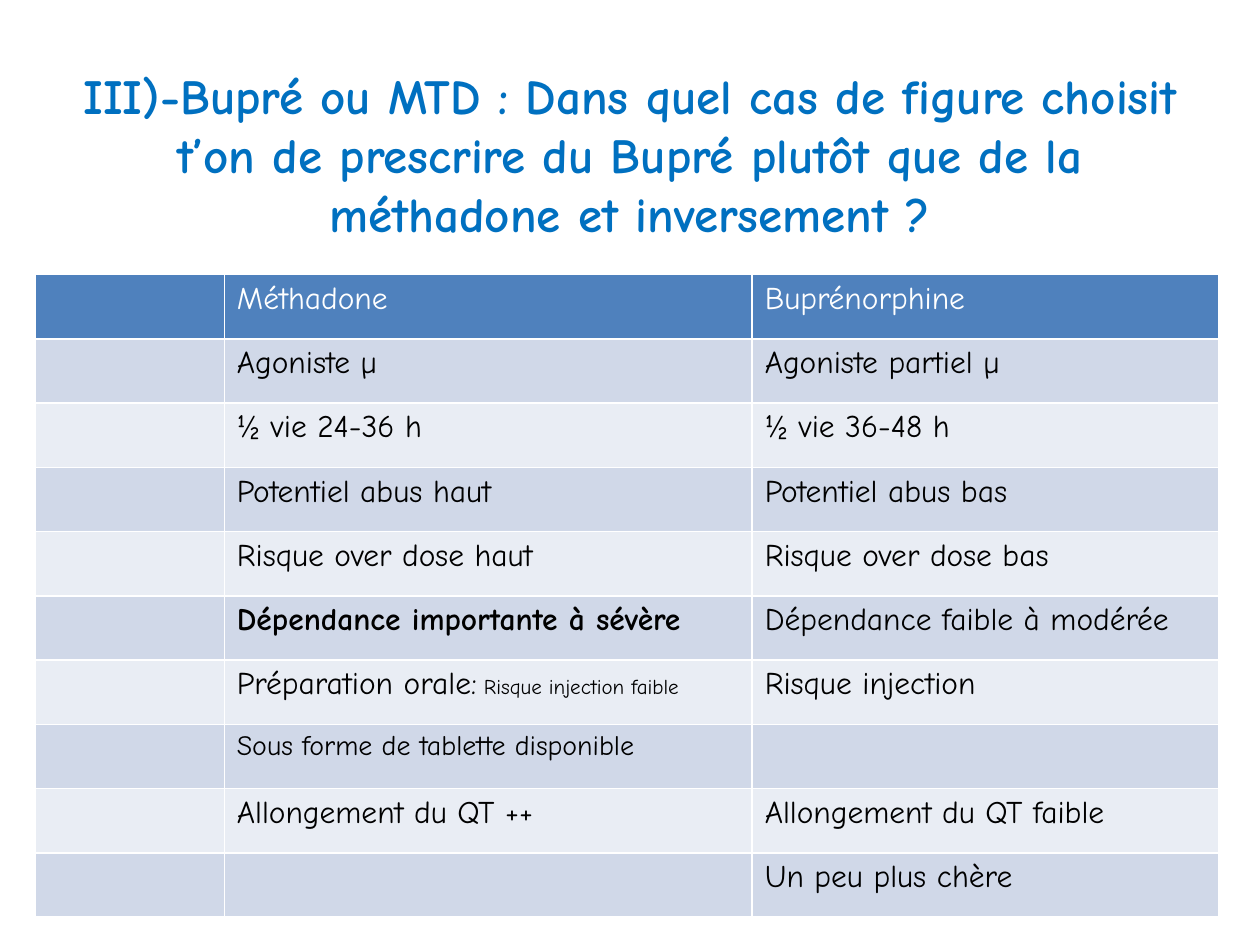
from dataclasses import dataclass

from lxml.etree import SubElement
from pptx import Presentation
from pptx.dml.color import RGBColor
from pptx.enum.text import MSO_ANCHOR, PP_ALIGN
from pptx.oxml.ns import qn
from pptx.util import Inches, Pt

BLUE = RGBColor(0x00, 0x70, 0xC0)
HEADER = RGBColor(0x4F, 0x81, 0xBD)
BAND_DARK = RGBColor(0xD0, 0xD8, 0xE8)
BAND_LIGHT = RGBColor(0xE9, 0xED, 0xF4)
WHITE = RGBColor(0xFF, 0xFF, 0xFF)
BLACK = RGBColor(0x00, 0x00, 0x00)
FONT = "Comic Neue"

SLIDE_W, SLIDE_H = Inches(10), Inches(7.5)
TABLE_LEFT, TABLE_TOP = Inches(0.28), Inches(2.18)
COL_WIDTHS = [Inches(w) for w in (1.5, 4.19, 3.7)]
ROW_H = Inches(0.51)


@dataclass(frozen=True)
class Span:
    text: str
    size: int = 18
    bold: bool = False


TITLE = Span("III)-Bupré ou MTD : Dans quel cas de figure choisit t’on de prescrire "
             "du Bupré plutôt que de la méthadone et inversement ?", 28, True)

# Methadone and buprenorphine columns; the first column stays empty
ROWS = [
    ([Span("Méthadone")], [Span("Buprénorphine")]),
    ([Span("Agoniste µ")], [Span("Agoniste partiel µ")]),
    ([Span("½ vie 24-36 h")], [Span("½ vie 36-48 h")]),
    ([Span("Potentiel abus haut")], [Span("Potentiel abus bas")]),
    ([Span("Risque over dose haut")], [Span("Risque over dose bas")]),
    ([Span("Dépendance importante à sévère", bold=True)],
     [Span("Dépendance faible à modérée")]),
    ([Span("Préparation orale:"), Span(" Risque injection faible", 12)],
     [Span("Risque injection")]),
    ([Span("Sous forme de tablette disponible", 16)], []),
    ([Span("Allongement du QT ++")], [Span("Allongement du QT faible")]),
    ([], [Span("Un peu plus chère")]),
]


def add_spans(p, spans: list[Span], color: RGBColor) -> None:
    for span in spans:
        r = p.add_run()
        r.text = span.text
        formats = {"name": FONT, "size": Pt(span.size), "bold": span.bold}
        for name, value in formats.items():
            setattr(r.font, name, value)
        r.font.color.rgb = color


def set_borders(cell, color: RGBColor, width: int) -> None:
    tc_pr = cell._tc.get_or_add_tcPr()
    for i, side in enumerate(("a:lnL", "a:lnR", "a:lnT", "a:lnB")):
        ln = SubElement(tc_pr, qn(side), w=str(width))
        fill = SubElement(ln, qn("a:solidFill"))
        SubElement(fill, qn("a:srgbClr"), val=str(color))
        tc_pr.insert(i, ln)  # borders precede the fill


def add_title(s) -> None:
    sp = s.shapes.add_textbox(SLIDE_W * 0.05, Inches(0.47), SLIDE_W * 0.9, SLIDE_H * 0.2)
    tf = sp.text_frame
    tf.word_wrap = True
    tf.vertical_anchor = MSO_ANCHOR.MIDDLE
    p = tf.paragraphs[0]
    p.alignment = PP_ALIGN.CENTER
    add_spans(p, [TITLE], BLUE)


def add_comparison(s) -> None:
    table = s.shapes.add_table(len(ROWS), len(COL_WIDTHS), TABLE_LEFT, TABLE_TOP,
                               sum(COL_WIDTHS), ROW_H * len(ROWS)).table
    for col, width in zip(table.columns, COL_WIDTHS):
        col.width = width
    for i, texts in enumerate(ROWS):
        table.rows[i].height = ROW_H
        band = BAND_DARK if i % 2 else BAND_LIGHT
        fill, color = (band, BLACK) if i else (HEADER, WHITE)
        for j, spans in enumerate(([], *texts)):
            cell = table.cell(i, j)
            cell.fill.solid()
            cell.fill.fore_color.rgb = fill
            set_borders(cell, WHITE, Pt(1))
            add_spans(cell.text_frame.paragraphs[0], spans, color)


def main() -> None:
    prs = Presentation()
    prs.slide_width, prs.slide_height = SLIDE_W, SLIDE_H
    s = prs.slides.add_slide(prs.slide_layouts[6])
    add_title(s)
    add_comparison(s)
    prs.save("out.pptx")


if __name__ == "__main__":
    main()
